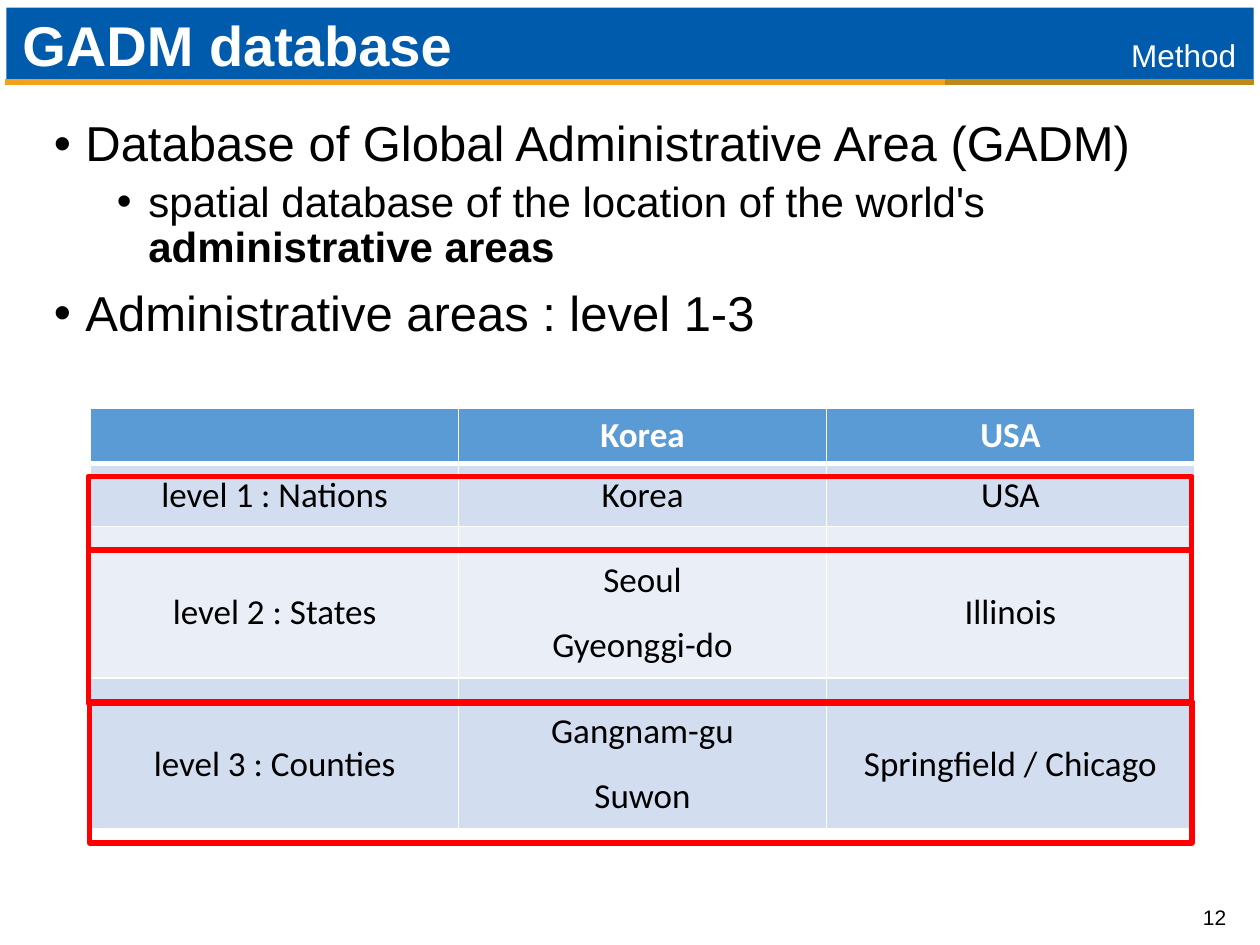
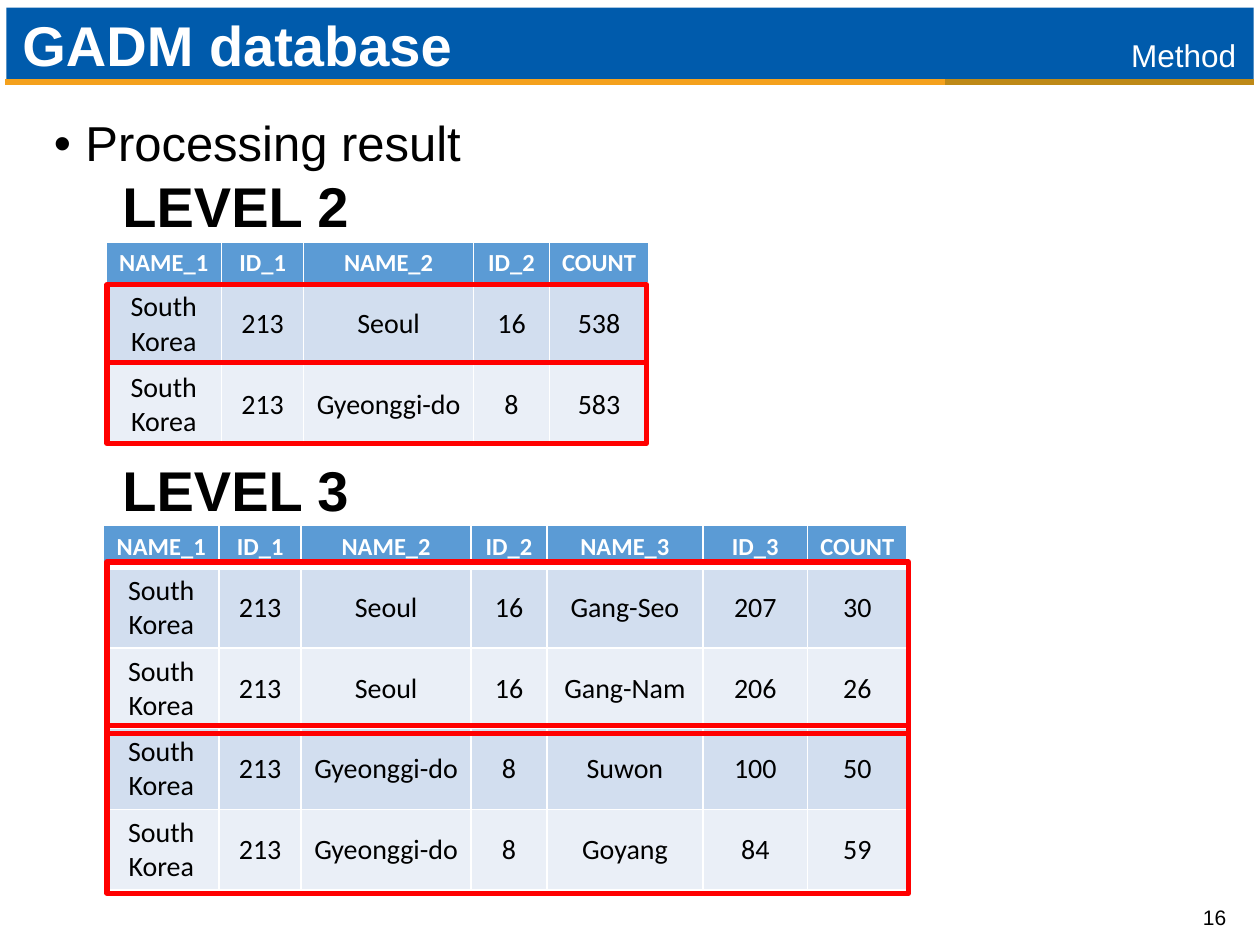
from dataclasses import dataclass

from lxml import etree
from pptx import Presentation
from pptx.dml.color import RGBColor
from pptx.enum.shapes import MSO_CONNECTOR, MSO_SHAPE
from pptx.enum.text import MSO_ANCHOR, PP_ALIGN
from pptx.oxml.ns import qn
from pptx.util import Inches, Pt

LEFT, RIGHT, CENTER = PP_ALIGN.LEFT, PP_ALIGN.RIGHT, PP_ALIGN.CENTER
TOP, MIDDLE = MSO_ANCHOR.TOP, MSO_ANCHOR.MIDDLE
RECT, LINE = MSO_SHAPE.RECTANGLE, MSO_CONNECTOR.STRAIGHT


@dataclass(frozen=True)
class Theme:
    white: str = "FFFFFF"
    black: str = "000000"
    blue: str = "005BAC"
    gold: str = "F4A11D"
    brown: str = "BE8917"
    red: str = "FF0000"
    head: str = "5B9BD5"
    bands: tuple = ("D2DEEF", "EAEFF7")
    font: str = "Arial"
    grid_font: str = "Calibri"
    title: int = 32
    tag: int = 18
    page: int = 12
    body: tuple = (28, 24)
    rule: int = 3


T = Theme()

TITLE, TAG = "GADM database", "Method"

# Each bullet: level, then runs of (text, bold)
AREAS = [
    (0, [("Database of Global Administrative Area (GADM)", False)]),
    (1, [("spatial database of the location of the world's ", False),
         ("administrative areas", True)]),
    (0, [("Administrative areas : level 1-3", False)]),
]
RESULT = [(0, [("Processing result", False)])]

LEVELS = [
    ["", "Korea", "USA"],
    ["level 1 : Nations", "Korea", "USA"],
    ["level 2 : States", "Seoul\nGyeonggi-do", "Illinois"],
    ["level 3 : Counties", "Gangnam-gu\nSuwon", "Springfield / Chicago"],
]

NATION, CODE = "South Korea", "213"
STATES = [
    ["NAME_1", "ID_1", "NAME_2", "ID_2", "COUNT"],
    [NATION, CODE, "Seoul", "16", "538"],
    [NATION, CODE, "Gyeonggi-do", "8", "583"],
]
TOWNS = [
    ["NAME_1", "ID_1", "NAME_2", "ID_2", "NAME_3", "ID_3", "COUNT"],
    [NATION, CODE, "Seoul", "16", "Gang-Seo", "207", "30"],
    [NATION, CODE, "Seoul", "16", "Gang-Nam", "206", "26"],
    [NATION, CODE, "Gyeonggi-do", "8", "Suwon", "100", "50"],
    [NATION, CODE, "Gyeonggi-do", "8", "Goyang", "84", "59"],
]
WIDTHS = {"NAME_1": 0.92, "ID_1": 0.65, "NAME_2": 1.35, "ID_2": 0.6,
          "NAME_3": 1.24, "ID_3": 0.83, "COUNT": 0.79}

# Red frames: left, top, width, height
LEVEL_MARKS = [(0.7, 3.78, 8.76, 0.58), (0.7, 4.37, 8.76, 1.21),
               (0.71, 5.57, 8.75, 1.12)]
RESULT_MARKS = [(0.85, 2.26, 4.28, 0.62), (0.85, 2.88, 4.28, 0.64),
                (0.85, 4.46, 6.36, 1.36), (0.85, 5.76, 6.36, 1.33)]

# Caption, its top, rows, table left and top
RESULTS = [("LEVEL 2", 1.48, STATES, 0.84, 1.92),
           ("LEVEL 3", 3.74, TOWNS, 0.82, 4.17)]


def rgb(color):
    return RGBColor.from_string(color)


def add_run(para, text, size, color, bold=False, font=T.font):
    run = para.add_run()
    run.text = text
    run.font.name, run.font.size, run.font.bold = font, Pt(size), bold
    run.font.color.rgb = rgb(color)


def add_box(slide, box, anchor=TOP):
    frame = slide.shapes.add_textbox(*map(Inches, box)).text_frame
    frame.word_wrap = True
    frame.vertical_anchor = anchor
    return frame


def add_label(slide, box, text, size, color, bold=False, align=LEFT,
              anchor=MIDDLE, space=1.0):
    para = add_box(slide, box, anchor).paragraphs[0]
    para.alignment, para.line_spacing = align, space
    add_run(para, text, size, color, bold)


def add_rect(slide, box, fill=None, line=None):
    shape = slide.shapes.add_shape(RECT, *map(Inches, box))
    shape.shadow.inherit = False
    if fill:
        shape.fill.solid()
        shape.fill.fore_color.rgb = rgb(fill)
    else:
        shape.fill.background()
    if line:
        shape.line.color.rgb = rgb(line)
        shape.line.width = Pt(T.rule)
    else:
        shape.line.fill.background()


def add_rule(slide, start, end, y, color):
    rule = slide.shapes.add_connector(
        LINE, Inches(start), Inches(y), Inches(end), Inches(y))
    rule.line.color.rgb = rgb(color)
    rule.line.width = Pt(T.rule)
    etree.SubElement(rule._element.spPr, qn("a:effectLst"))


def add_bullets(slide, items):
    frame = add_box(slide, (0.33, 0.9, 9.3, 6.01))
    for i, (level, runs) in enumerate(items):
        para = frame.add_paragraph() if i else frame.paragraphs[0]
        props = para._p.get_or_add_pPr()
        props.set("marL", str(Inches(0.25 + 0.5 * level)))
        props.set("indent", str(Inches(-0.25)))
        etree.SubElement(props, qn("a:buFont"), typeface=T.font)
        etree.SubElement(props, qn("a:buChar"), char="•")
        para.level = level
        para.line_spacing = 0.9
        para.space_before = Pt((5 if level else 10) if i else 0)
        for text, bold in runs:
            add_run(para, text, T.body[level], T.black, bold)


def add_edges(cell, base):
    """Draw white cell borders; base is the width of the lower one."""
    props = cell._tc.get_or_add_tcPr()
    for side, width in (("L", 1), ("R", 1), ("T", 1), ("B", base)):
        edge = etree.SubElement(props, qn(f"a:ln{side}"), w=str(Pt(width)))
        fill = etree.SubElement(edge, qn("a:solidFill"))
        etree.SubElement(fill, qn("a:srgbClr"), val=T.white)


def add_grid(slide, rows, left, top, widths, heights, sizes, spaces):
    """Add a banded table; sizes holds head and body type sizes."""
    table = slide.shapes.add_table(
        len(rows), len(widths), Inches(left), Inches(top),
        Inches(sum(widths)), Inches(sum(heights))).table
    table.horz_banding = False
    for col, width in zip(table.columns, widths):
        col.width = Inches(width)
    for r, row in enumerate(rows):
        head = r == 0
        table.rows[r].height = Inches(heights[r])
        for c, text in enumerate(row):
            cell = table.cell(r, c)
            add_edges(cell, 3 if head else 1)
            cell.fill.solid()
            cell.fill.fore_color.rgb = rgb(T.head if head else T.bands[(r - 1) % 2])
            cell.vertical_anchor = MIDDLE
            frame = cell.text_frame
            for i, part in enumerate(text.split("\n")):
                para = frame.add_paragraph() if i else frame.paragraphs[0]
                para.alignment, para.line_spacing = CENTER, spaces[r]
                if part:
                    add_run(para, part, sizes[0 if head else 1],
                            T.white if head else T.black, head, T.grid_font)


def add_page(deck, number, items):
    """Start a slide with the shared band, title, tag and page number."""
    slide = deck.slides.add_slide(deck.slide_layouts[6])
    add_rect(slide, (0.05, 0.06, 9.9, 0.59), fill=T.blue)
    add_rule(slide, 0.04, 7.51, 0.65, T.gold)
    add_rule(slide, 7.5, 9.95, 0.65, T.brown)
    add_label(slide, (7.58, 7.08, 2.25, 0.4), number, T.page, T.black, align=RIGHT)
    add_label(slide, (0.08, 0.09, 5.93, 0.58), TITLE, T.title, T.white,
              bold=True, space=0.9)
    add_label(slide, (6.57, 0.27, 3.34, 0.37), TAG, T.tag, T.white,
              align=RIGHT, anchor=TOP, space=0.9)
    add_bullets(slide, items)
    return slide


def add_marks(slide, boxes):
    for box in boxes:
        add_rect(slide, box, line=T.red)


def main():
    deck = Presentation()
    deck.slide_width, deck.slide_height = Inches(10), Inches(7.5)

    slide = add_page(deck, "12", AREAS)
    add_grid(slide, LEVELS, 0.72, 3.24, [2.92] * 3, [0.44, 0.5, 1.2, 1.2],
             (20, 20), [1.0, 1.0, 1.5, 1.5])
    add_marks(slide, LEVEL_MARKS)

    slide = add_page(deck, "16", RESULT)
    for name, y, rows, left, top in RESULTS:
        count = len(rows)
        add_grid(slide, rows, left, top, [WIDTHS[key] for key in rows[0]],
                 [0.33] + [0.64] * (count - 1), (14, 16), [1.0] * count)
        add_label(slide, (0.44, y, 2.86, 0.29), name, T.title, T.black,
                  bold=True, align=CENTER)
    add_marks(slide, RESULT_MARKS)

    deck.save("out.pptx")


if __name__ == "__main__":
    main()
